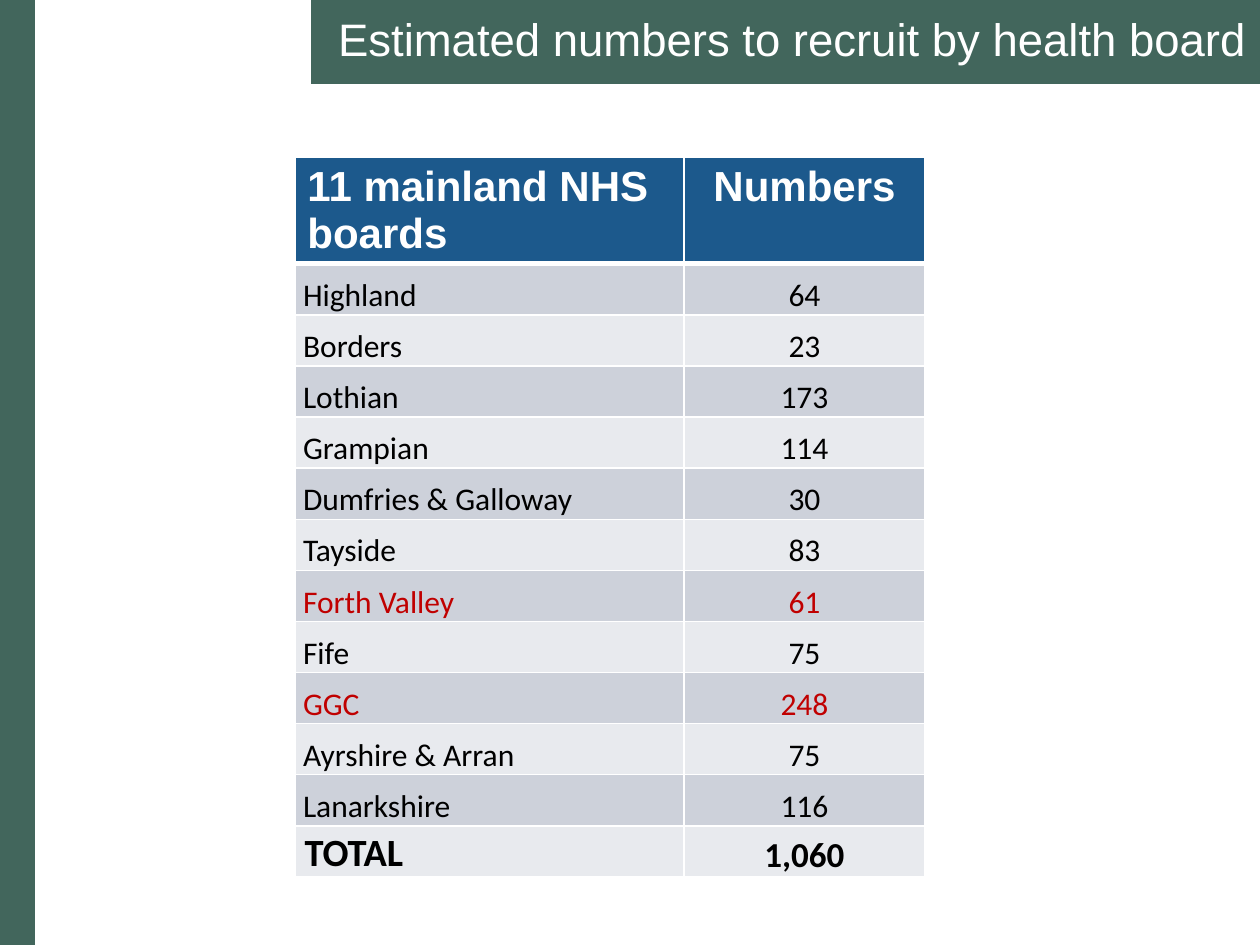
import pptx
import pptx.dml.color
import pptx.enum.shapes
import pptx.enum.text
import pptx.oxml
import pptx.oxml.ns
import pptx.util

Pt = pptx.util.Pt
RGBColor = pptx.dml.color.RGBColor
Align = pptx.enum.text.PP_ALIGN
Anchor = pptx.enum.text.MSO_ANCHOR

GREEN = RGBColor(0x42, 0x66, 0x5C)
BLUE = RGBColor(0x1C, 0x59, 0x8C)
WHITE = RGBColor(0xFF, 0xFF, 0xFF)
BLACK = RGBColor(0, 0, 0)
RED = RGBColor(0xC0, 0, 0)
BANDS = (RGBColor(0xCD, 0xD1, 0xDA), RGBColor(0xE8, 0xEA, 0xEE))

TITLE = "Estimated numbers to recruit by health board"
HEADER = ("11 mainland NHS boards", "Numbers")
BOARDS = [
    ("Highland", "64"),
    ("Borders", "23"),
    ("Lothian", "173"),
    ("Grampian", "114"),
    ("Dumfries & Galloway", "30"),
    ("Tayside", "83"),
    ("Forth Valley", "61"),
    ("Fife", "75"),
    ("GGC", "248"),
    ("Ayrshire & Arran", "75"),
    ("Lanarkshire", "116"),
]
TOTAL = ("TOTAL", "1,060")
HIGHLIGHTED = {"Forth Valley", "GGC"}

SLIDE_SIZE = (720, 540)
BAR_WIDTH = 20
TITLE_LEFT, TITLE_HEIGHT = 177.8, 48
TABLE_LEFT, TABLE_TOP, TABLE_HEIGHT = 168.5, 90, 415.5
COLUMN_WIDTHS = (222.5, 137.5)
ROW_HEIGHT = 29.2
NAME_INDENTS = {18: 4.7, 22: 5.6}
ALIGNMENTS = (Align.LEFT, Align.CENTER)


def set_attributes(target, values):
    for name, value in values.items():
        setattr(target, name, value)


def format_font(font, name, size, color, bold=False):
    set_attributes(font, {"name": name, "size": Pt(size), "bold": bold})
    font.color.rgb = color


def fill_solid(target, color):
    target.fill.solid()
    target.fill.fore_color.rgb = color


def set_borders(cell, widths):
    properties = cell._tc.get_or_add_tcPr()
    for position, (side, width) in enumerate(widths.items()):
        border = pptx.oxml.parse_xml(
            f'<a:ln{side} {pptx.oxml.ns.nsdecls("a")} w="{Pt(width)}">'
            f'<a:solidFill><a:srgbClr val="{WHITE}"/></a:solidFill></a:ln{side}>'
        )
        properties.insert(position, border)


def write_cell(cell, text, alignment, fill, font_values):
    cell.text = text
    paragraph = cell.text_frame.paragraphs[0]
    paragraph.alignment = alignment
    format_font(paragraph.runs[0].font, *font_values)
    fill_solid(cell, fill)


def add_title(slide):
    title = slide.shapes.title
    set_attributes(title, {
        "left": Pt(TITLE_LEFT), "top": Pt(0),
        "width": Pt(SLIDE_SIZE[0] - TITLE_LEFT), "height": Pt(TITLE_HEIGHT),
    })
    fill_solid(title, GREEN)
    frame = title.text_frame
    frame.text = TITLE
    set_attributes(frame, {
        "word_wrap": True, "auto_size": pptx.enum.text.MSO_AUTO_SIZE.NONE,
        "vertical_anchor": Anchor.MIDDLE,
        "margin_left": Pt(6), "margin_right": Pt(7.2),
        "margin_top": Pt(3), "margin_bottom": Pt(3),
    })
    paragraph = frame.paragraphs[0]
    set_attributes(paragraph, {"alignment": Align.RIGHT, "line_spacing": 0.9})
    format_font(paragraph.runs[0].font, "Arial", 26, WHITE)


def add_board_table(slide):
    rows = [HEADER, *BOARDS, TOTAL]
    table_frame = slide.shapes.add_table(
        len(rows), len(HEADER), Pt(TABLE_LEFT), Pt(TABLE_TOP),
        Pt(sum(COLUMN_WIDTHS)), Pt(TABLE_HEIGHT))
    table = table_frame.table
    for column, width in zip(table.columns, COLUMN_WIDTHS):
        column.width = Pt(width)
    for row_index, row in enumerate(rows):
        table.rows[row_index].height = Pt(ROW_HEIGHT)
        for column_index, text in enumerate(row):
            cell = table.cell(row_index, column_index)
            alignment = ALIGNMENTS[column_index]
            if row is HEADER:
                write_cell(cell, text, alignment, BLUE, ("Arial", 24, WHITE, True))
            else:
                is_total = row is TOTAL
                size = (22, 20)[column_index] if is_total else 18
                color = RED if row[0] in HIGHLIGHTED else BLACK
                write_cell(cell, text, alignment, BANDS[(row_index - 1) % 2],
                           ("Calibri", size, color, is_total))
                set_attributes(cell, {
                    "vertical_anchor": Anchor.BOTTOM,
                    "margin_left": Pt(0.7 if column_index else NAME_INDENTS[size]),
                    "margin_right": Pt(0.7), "margin_top": Pt(0.7),
                    "margin_bottom": Pt(0),
                })
            set_borders(cell, {"L": 1, "R": 1, "T": 3 if row_index == 1 else 1,
                               "B": 3 if row is HEADER else 1})
    table_frame.height = Pt(TABLE_HEIGHT)


def main():
    presentation = pptx.Presentation()
    presentation.slide_width, presentation.slide_height = map(Pt, SLIDE_SIZE)
    slide = presentation.slides.add_slide(presentation.slide_layouts[5])
    side_bar = slide.shapes.add_shape(
        pptx.enum.shapes.MSO_SHAPE.RECTANGLE, Pt(0), Pt(0),
        Pt(BAR_WIDTH), Pt(SLIDE_SIZE[1]))
    side_bar.shadow.inherit = False
    fill_solid(side_bar, GREEN)
    side_bar.line.fill.background()
    add_title(slide)
    add_board_table(slide)
    presentation.save("out.pptx")


if __name__ == "__main__":
    main()
